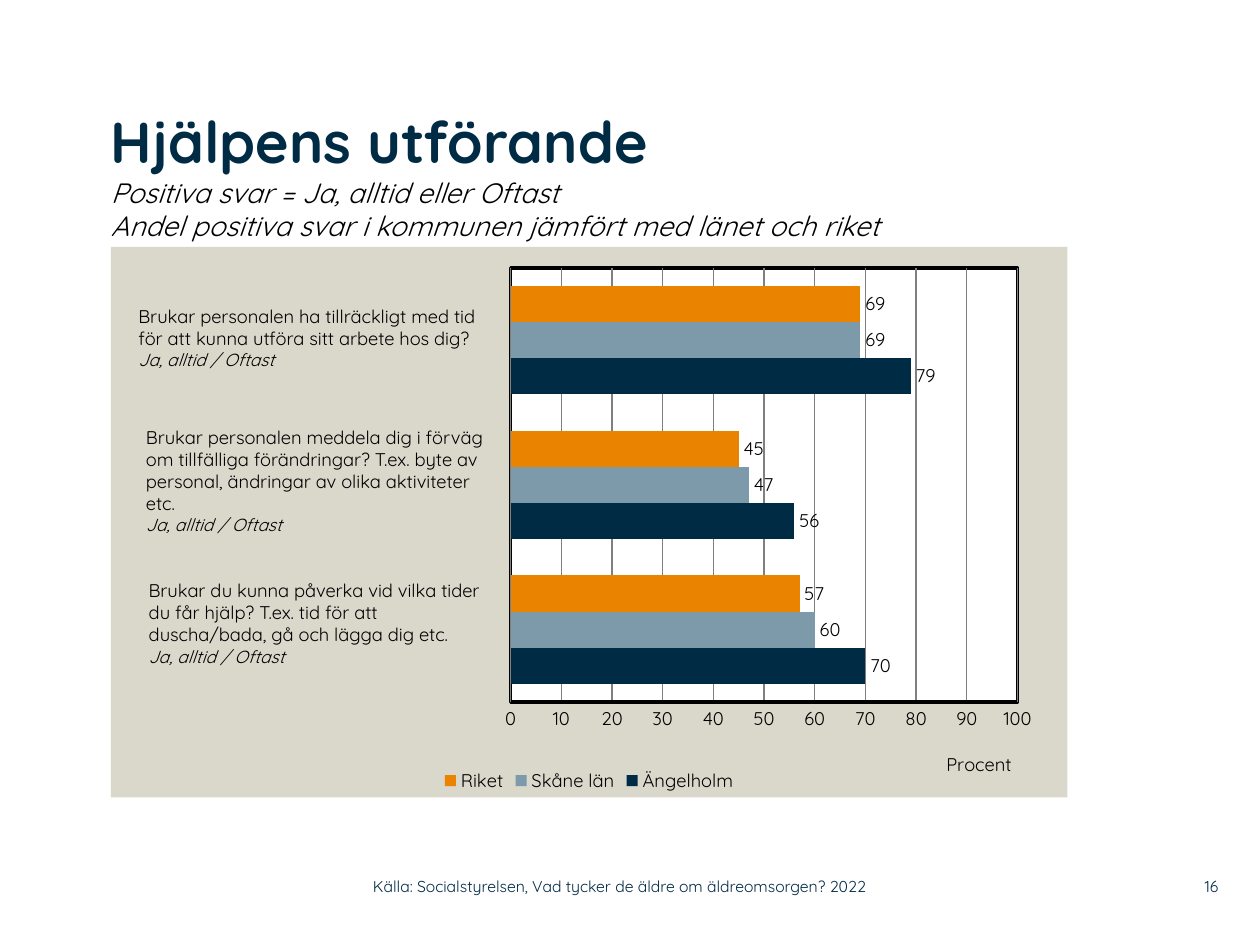
from pptx import Presentation
from pptx.chart.data import CategoryChartData
from pptx.dml.color import RGBColor
from pptx.enum.chart import XL_CHART_TYPE, XL_LABEL_POSITION, XL_LEGEND_POSITION, XL_TICK_MARK
from pptx.enum.text import MSO_ANCHOR, MSO_AUTO_SIZE, PP_ALIGN
from pptx.oxml import parse_xml
from pptx.oxml.ns import nsdecls, qn
from pptx.util import Pt

COLORS = {"navy": "002B45", "blue": "7D9AAA", "orange": "E98300", "sand": "DAD7CB",
          "white": "FFFFFF", "black": "000000", "grid": "808080"}
FONT = "Quicksand"
ANSWER = "Ja, alltid / Oftast"

SERIES = [("Ängelholm", (70, 56, 79), "navy"),
          ("Skåne län", (60, 47, 69), "blue"),
          ("Riket", (57, 45, 69), "orange")]

QUESTIONS = [
    ((72, 170.6, 214, 58), ["Brukar personalen ha tillräckligt med tid",
                            "för att kunna utföra sitt arbete hos dig?"]),
    ((76.3, 239.8, 215.3, 70.6), ["Brukar personalen meddela dig i förväg om tillfälliga förändringar? "
                                  "T.ex. byte av personal, ändringar av olika aktiviteter etc."]),
    ((77.8, 327.6, 214, 58), ["Brukar du kunna påverka vid vilka tider",
                              "du får hjälp? T.ex. tid för att",
                              "duscha/bada, gå och lägga dig etc."]),
]


def color(name):
    return RGBColor.from_string(COLORS[name])


def style_font(font, size=10.5, ink="black", bold=False, italic=False):
    font.name, font.size = FONT, Pt(size)
    font.bold, font.italic = bold, italic
    font.color.rgb = color(ink)


def add_span(para, text, **style):
    span = para.add_run()
    span.text = text
    style_font(span.font, **style)


def area_format(fill, border=None, width=0):
    """Return chart shape properties with a solid fill and an optional border."""
    def solid(name):
        return f'<a:solidFill><a:srgbClr val="{COLORS[name]}"/></a:solidFill>'
    line = f'<a:ln w="{Pt(width)}">{solid(border)}</a:ln>' if border else "<a:ln><a:noFill/></a:ln>"
    return parse_xml(f'<c:spPr {nsdecls("c", "a")}>{solid(fill)}{line}</c:spPr>')


def manual_layout(inner=False, **fractions):
    """Return a chart layout placed by fractions x, y, w and h of the chart."""
    target = '<c:layoutTarget val="inner"/>' if inner else ""
    modes = "".join(f'<c:{key}Mode val="edge"/>' for key in ("x", "y"))
    values = "".join(f'<c:{key} val="{value}"/>' for key, value in fractions.items())
    return parse_xml(f'<c:layout {nsdecls("c")}><c:manualLayout>{target}{modes}{values}'
                     '</c:manualLayout></c:layout>')


def drop_layout(element):
    for layout in element.findall(qn("c:layout")):
        element.remove(layout)


class SlideBuilder:
    """Holds the current slide and adds styled elements to it."""

    def __init__(self, deck):
        self.page = deck.slides.add_slide(deck.slide_layouts[5])

    def frame(self, box, inset=True, anchor=MSO_ANCHOR.TOP, grow=False):
        frame = box.text_frame
        frame.word_wrap = True
        frame.auto_size = MSO_AUTO_SIZE.SHAPE_TO_FIT_TEXT if grow else MSO_AUTO_SIZE.NONE
        frame.vertical_anchor = anchor
        if not inset:
            frame.margin_left = frame.margin_right = frame.margin_top = frame.margin_bottom = 0
        return frame

    def title(self, heading, subtitles, place):
        box = self.page.shapes.title
        box.left, box.top, box.width, box.height = map(Pt, place)
        para = self.frame(box, inset=False).paragraphs[0]
        para.alignment = PP_ALIGN.LEFT
        add_span(para, heading, size=33, ink="navy", bold=True)
        for subtitle in subtitles:
            para.add_line_break()
            add_span(para, subtitle, size=16, italic=True)

    def text(self, lines, place, align=PP_ALIGN.LEFT, **frame_options):
        """Add a text box; each line is a text with its font style."""
        box = self.page.shapes.add_textbox(*map(Pt, place))
        frame = self.frame(box, **frame_options)
        for index, (text, style) in enumerate(lines):
            para = frame.add_paragraph() if index else frame.paragraphs[0]
            para.alignment = align
            add_span(para, text, **style)

    def bar_chart(self, series_rows, place):
        data = CategoryChartData()
        data.categories = ["1", "2", "3"]
        for name, values, _ in series_rows:
            data.add_series(name, values)
        chart = self.page.shapes.add_chart(
            XL_CHART_TYPE.BAR_CLUSTERED, *map(Pt, place), data).chart
        style_font(chart.font)
        chart.has_title = False
        chart.has_legend = True
        chart.legend.position = XL_LEGEND_POSITION.BOTTOM
        chart.legend.include_in_layout = False
        style_font(chart.legend.font)
        self.bars(chart.plots[0], series_rows)
        chart.category_axis.visible = False
        self.value_axis(chart.value_axis)

        chart_part = chart._chartSpace.find(qn("c:chart"))
        chart_part.addnext(area_format("sand"))
        plot_area = chart_part.find(qn("c:plotArea"))
        drop_layout(plot_area)
        plot_area.insert(0, manual_layout(inner=True, x=0.418, y=0.038, w=0.53, h=0.789))
        plot_area.append(area_format("white", border="black", width=2))

    def bars(self, plot, series_rows):
        plot.gap_width, plot.overlap = 100, 0
        plot.vary_by_categories = False
        for series, (_, _, ink) in zip(plot.series, series_rows):
            series.format.fill.solid()
            series.format.fill.fore_color.rgb = color(ink)
            labels = series.data_labels
            labels.show_value = True
            labels.position = XL_LABEL_POSITION.OUTSIDE_END
            style_font(labels.font)

    def value_axis(self, axis):
        axis.minimum_scale, axis.maximum_scale, axis.major_unit = 0, 100, 10
        axis.major_tick_mark = axis.minor_tick_mark = XL_TICK_MARK.NONE
        style_font(axis.tick_labels.font)
        axis.format.line.color.rgb = color("black")
        axis.format.line.width = Pt(2)
        axis.has_major_gridlines = True
        grid = axis.major_gridlines.format.line
        grid.color.rgb = color("grid")
        grid.width = Pt(0.75)
        add_span(axis.axis_title.text_frame.paragraphs[0], "Procent")
        title = axis.axis_title._element
        drop_layout(title)
        title.find(qn("c:tx")).addnext(manual_layout(x=0.87, y=0.91))


def main():
    deck = Presentation()
    deck.slide_width, deck.slide_height = Pt(720), Pt(540)
    slide = SlideBuilder(deck)
    slide.title("Hjälpens utförande",
                ["Positiva svar = Ja, alltid eller Oftast",
                 "Andel positiva svar i kommunen jämfört med länet och riket"],
                (63.4, 60.5, 560.9, 80.6))
    slide.bar_chart(SERIES, (63.4, 141.1, 546.5, 314.6))
    for place, question in QUESTIONS:
        lines = [(line, {}) for line in question] + [(ANSWER, {"size": 10, "italic": True})]
        slide.text(lines, place, grow=True)
    footer = {"size": 9, "ink": "navy"}
    for text, left, width, align in [
            ("Källa: Socialstyrelsen, Vad tycker de äldre om äldreomsorgen? 2022",
             213.1, 319, PP_ALIGN.LEFT),
            ("16", 662.4, 33.8, PP_ALIGN.RIGHT)]:
        slide.text([(text, footer)], (left, 496.1, width, 20.9), align=align,
                   inset=False, anchor=MSO_ANCHOR.MIDDLE)
    deck.save("out.pptx")


if __name__ == "__main__":
    main()
